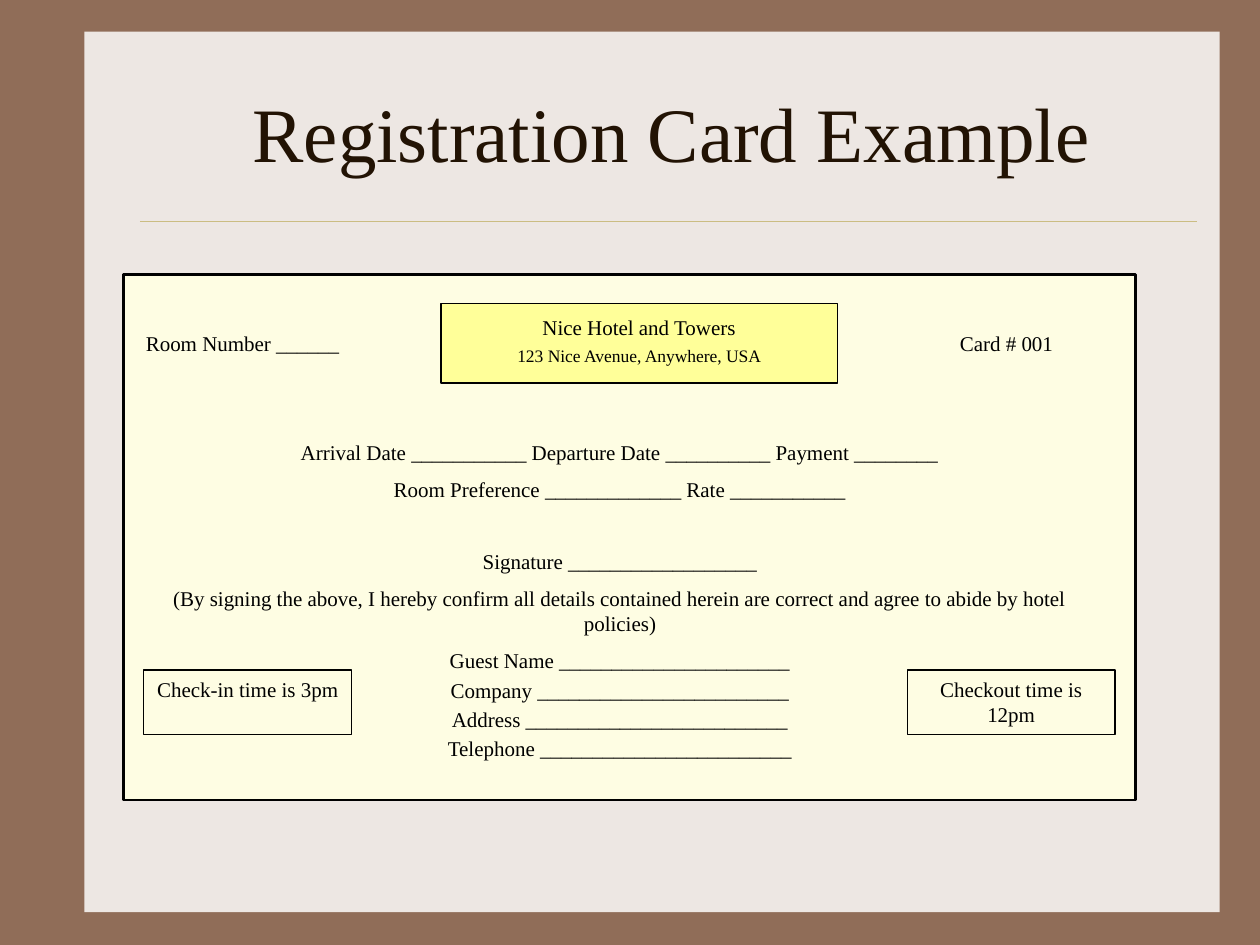
from pptx import Presentation
from pptx.dml.color import RGBColor
from pptx.enum.shapes import MSO_CONNECTOR, MSO_SHAPE
from pptx.enum.text import MSO_ANCHOR, PP_ALIGN
from pptx.oxml.ns import qn
from pptx.util import Cm, Pt
from lxml import etree

FONT = "Times New Roman"
BLACK = "000000"
GAP = 6.6  # points between paragraphs


def color(value):
    return RGBColor.from_string(value)


def add_box(s, x, y, w, h, fill=None, line=None, width=0.75):
    sp = s.shapes.add_shape(MSO_SHAPE.RECTANGLE, Cm(x), Cm(y), Cm(w), Cm(h))
    sp.shadow.inherit = False
    if fill:
        sp.fill.solid()
        sp.fill.fore_color.rgb = color(fill)
    else:
        sp.fill.background()
    if line:
        sp.line.color.rgb = color(line)
        sp.line.width = Pt(width)
    else:
        sp.line.fill.background()
    return sp


def add_rule(s, x1, x2, y, line):
    cn = s.shapes.add_connector(MSO_CONNECTOR.STRAIGHT, Cm(x1), Cm(y), Cm(x2), Cm(y))
    cn.line.color.rgb = color(line)
    cn.line.width = Pt(0.25)
    etree.SubElement(cn._element.spPr, qn("a:effectLst"))


def write(sp, paragraphs, align=PP_ALIGN.CENTER, anchor=MSO_ANCHOR.TOP, ink=BLACK):
    """Each paragraph is (text, size, line spacing, space before)."""
    tf = sp.text_frame
    tf.word_wrap = True
    tf.vertical_anchor = anchor
    for i, (text, size, spacing, before) in enumerate(paragraphs):
        p = tf.paragraphs[0] if i == 0 else tf.add_paragraph()
        p.alignment = align
        p.line_spacing = spacing
        p.space_before = Pt(before if i else 0)
        r = p.add_run()
        r.text = text
        r.font.name = FONT
        r.font.size = Pt(size)
        r.font.color.rgb = color(ink)


def add_text(s, x, y, w, h, paragraphs, **style):
    write(s.shapes.add_textbox(Cm(x), Cm(y), Cm(w), Cm(h)), paragraphs, **style)


def main():
    prs = Presentation()
    prs.slide_width, prs.slide_height = Cm(25.4), Cm(19.05)
    s = prs.slides.add_slide(prs.slide_layouts[6])

    # Background, panel and title
    s.background.fill.solid()
    s.background.fill.fore_color.rgb = color("906D58")
    add_box(s, 1.7, 0.64, 22.89, 17.75, "EDE7E3")
    add_rule(s, 2.82, 24.13, 4.45, "CBBD83")
    add_text(s, 2.97, 1.07, 21.16, 3.18, [("Registration Card Example", 44, 1, 0)],
             anchor=MSO_ANCHOR.MIDDLE, ink="221304")

    # Card and hotel header
    add_box(s, 2.49, 5.54, 20.4, 10.59, "FEFDE3", BLACK, 1.5)
    add_box(s, 8.89, 6.12, 8, 1.6, "FFFF99", BLACK)
    add_text(s, 9.09, 6.32, 7.59, 1.22, [
        ("Nice Hotel and Towers", 12, 0.8, 0),
        ("123 Nice Avenue, Anywhere, USA", 10, 0.8, 5.5),
    ])

    # Room and card numbers
    for x, w, text in ((2.69, 5.99, "Room Number ______"), (19.1, 3.4, "Card # 001")):
        add_text(s, x, 6.53, w, 0.76, [(text, 12, 1, 0)], align=PP_ALIGN.LEFT)

    # Form fields
    add_text(s, 3.1, 8.74, 18.8, 6.93, [
        ("Arrival Date ___________ Departure Date __________ Payment ________", 12, 1, 0),
        ("Room Preference _____________ Rate ___________", 12, 1, GAP),
        ("Signature __________________", 12, 1, 27),
        ("(By signing the above, I hereby confirm all details contained herein "
         "are correct and agree to abide by hotel policies)", 12, 1, GAP),
        ("Guest Name ______________________", 12, 1, GAP),
        ("Company ________________________", 12, 0.7, GAP),
        ("Address _________________________", 12, 0.7, GAP),
        ("Telephone ________________________", 12, 0.7, GAP),
    ])

    # Check-in and checkout notes
    for x, text in ((2.9, "Check-in time is 3pm"), (18.29, "Checkout time is 12pm")):
        write(add_box(s, x, 13.51, 4.19, 1.3, line=BLACK), [(text, 12, 1, 0)])

    prs.save("out.pptx")


if __name__ == "__main__":
    main()
